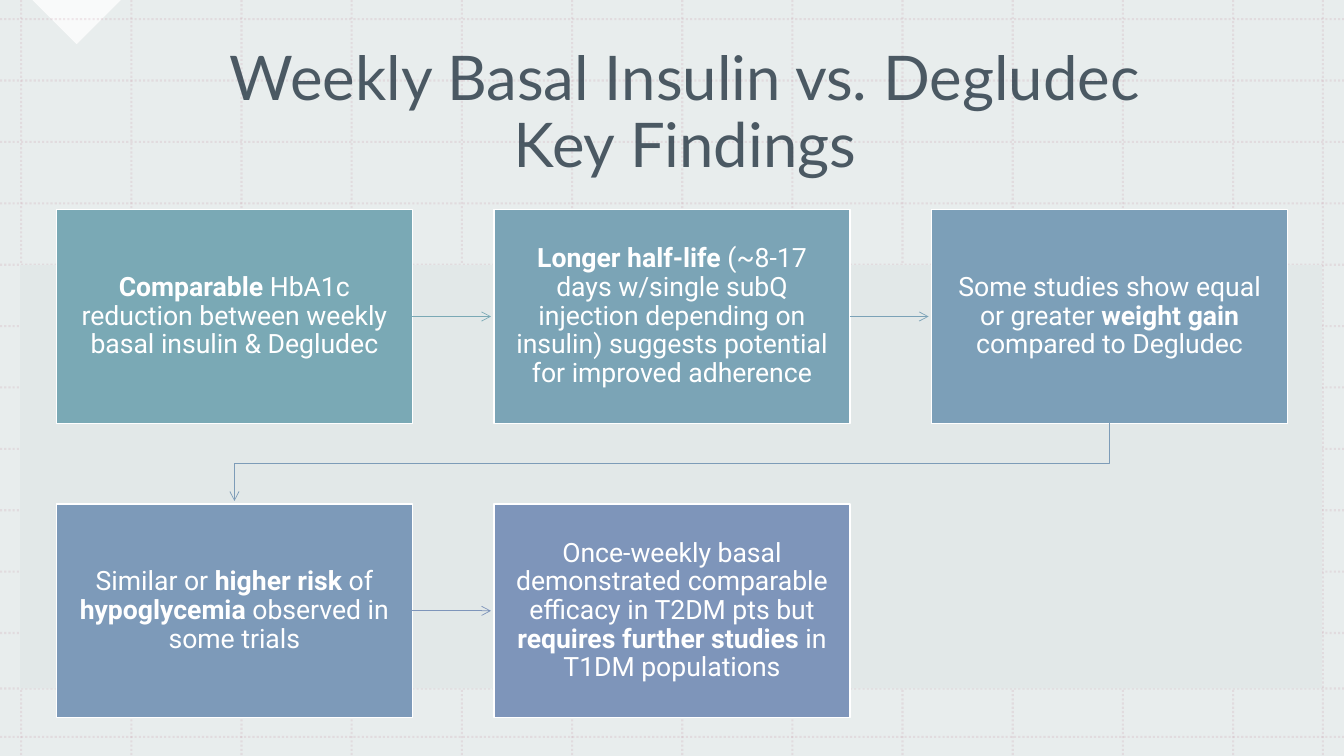
from lxml import etree
from pptx import Presentation
from pptx.dml.color import RGBColor
from pptx.enum.dml import MSO_LINE
from pptx.enum.shapes import MSO_CONNECTOR, MSO_SHAPE
from pptx.enum.text import MSO_ANCHOR, MSO_AUTO_SIZE, PP_ALIGN
from pptx.oxml.ns import qn
from pptx.util import Inches, Pt

RECTANGLE, TRIANGLE = MSO_SHAPE.RECTANGLE, MSO_SHAPE.RIGHT_TRIANGLE
STRAIGHT, DOTTED = MSO_CONNECTOR.STRAIGHT, MSO_LINE.ROUND_DOT
MIDDLE, CENTER, NO_FIT = MSO_ANCHOR.MIDDLE, PP_ALIGN.CENTER, MSO_AUTO_SIZE.NONE
RIGHT_SIDE = 3

PAGE_WIDTH, PAGE_HEIGHT = 13.33, 7.5
BOX_WIDTH, BOX_HEIGHT = 3.53, 2.12
BOX_LEFT, BOX_TOP = 0.56, 2.08
COLUMN_STEP, ROW_STEP = 4.34, 2.92
COLUMNS = 3
ARROW_GAP = 0.03

# Text between asterisks is bold; each arrow colour belongs to the arrow leaving the box.
FINDINGS = [
    ("*Comparable* HbA1c reduction between weekly basal insulin & Degludec",
     "7AA9B5", "7AA9B5"),
    ("*Longer half-life *(~8-17 days w/single subQ injection depending on "
     "insulin) suggests potential for improved adherence", "7BA4B6", "7BA2B7"),
    ("Some studies show equal or greater *weight gain* compared to Degludec",
     "7C9FB8", "7D9CB8"),
    ("Similar or *higher risk *of* hypoglycemia* observed in some trials",
     "7D9AB9", "7E95BA"),
    ("Once-weekly basal demonstrated comparable efficacy in T2DM pts but "
     "*requires further studies* in T1DM populations", "7E95BA", None),
]


def paint(fill, color, opacity=100):
    """Fill with a solid hex colour, see-through when opacity is below 100."""
    fill.solid()
    fill.fore_color.rgb = RGBColor.from_string(color)
    if opacity < 100:
        color_node = fill._xPr.find(".//" + qn("a:srgbClr"))
        etree.SubElement(color_node, qn("a:alpha"), val=str(opacity * 1000))


def set_all(target, values):
    for name, value in values.items():
        setattr(target, name, value)


class FindingsPage:
    """The current slide together with its fonts and line styles."""

    title_font = {"name": "Lato", "size": Pt(44)}
    box_font = {"name": "Roboto", "size": Pt(19)}
    centred = {"alignment": CENTER, "line_spacing": 0.9}
    title_frame = {"vertical_anchor": MIDDLE, "word_wrap": True, "auto_size": NO_FIT}
    box_frame = {"vertical_anchor": MIDDLE, "word_wrap": True,
                 "margin_left": Inches(0.17), "margin_right": Inches(0.17),
                 "margin_top": Inches(0.18), "margin_bottom": Inches(0.18)}

    def __init__(self, deck, background):
        self.page = deck.slides.add_slide(deck.slide_layouts[5])
        self.shapes = self.page.shapes
        paint(self.page.background.fill, background)

    def add_spans(self, para, text, font, color, opacity=100):
        set_all(para, self.centred)
        for index, piece in enumerate(text.split("*")):
            if piece:
                span = para.add_run()
                span.text = piece
                set_all(span.font, {**font, "bold": index % 2 == 1})
                paint(span.font.fill, color, opacity)

    def title(self, lines, left, top, width, height):
        box = self.shapes.title
        set_all(box, {"left": Inches(left), "top": Inches(top),
                      "width": Inches(width), "height": Inches(height)})
        set_all(box.text_frame, self.title_frame)
        para = box.text_frame.paragraphs[0]
        for index, line in enumerate(lines):
            if index:
                para.add_line_break()
            self.add_spans(para, line, self.title_font, "243441", 80)
        box.element.getparent().append(box.element)  # in front of the grid

    def shape(self, kind, left, top, width, height, color, opacity=100):
        shape = self.shapes.add_shape(
            kind, Inches(left), Inches(top), Inches(width), Inches(height))
        shape.shadow.inherit = False
        paint(shape.fill, color, opacity)
        shape.line.fill.background()
        return shape

    def finding(self, left, top, text, color):
        box = self.shape(RECTANGLE, left, top, BOX_WIDTH, BOX_HEIGHT, color)
        paint(box.line.fill, "FFFFFF")
        box.line.width = Pt(1)
        set_all(box.text_frame, self.box_frame)
        self.add_spans(box.text_frame.paragraphs[0], text, self.box_font, "FFFFFF")
        return box

    def line(self, x1, y1, x2, y2, color, width, opacity=100):
        line = self.shapes.add_connector(
            STRAIGHT, Inches(x1), Inches(y1), Inches(x2), Inches(y2))
        paint(line.line.fill, color, opacity)
        line.line.width = Pt(width)
        etree.SubElement(line.element.spPr, qn("a:effectLst"))
        return line

    def grid_line(self, x1, y1, x2, y2):
        self.line(x1, y1, x2, y2, "C796A6", 1.5, 20).line.dash_style = DOTTED

    def arrowhead(self, shape):
        outline = shape.element.spPr.find(qn("a:ln"))
        etree.SubElement(outline, qn("a:tailEnd"), type="arrow")

    def arrow_right(self, box, left, top, color):
        start, middle = left + BOX_WIDTH, top + BOX_HEIGHT / 2
        end = left + COLUMN_STEP - ARROW_GAP
        arrow = self.line(start, middle, end, middle, color, 0.5)
        arrow.begin_connect(box, RIGHT_SIDE)
        self.arrowhead(arrow)

    def arrow_to_next_row(self, left, top, color):
        """Bent arrow from the last box of a row to the first of the next."""
        start_x, end_x = left + BOX_WIDTH / 2, BOX_LEFT + BOX_WIDTH / 2
        start_y, end_y = top + BOX_HEIGHT, top + ROW_STEP
        bend_y = (start_y + end_y) / 2
        corners = [(start_x, bend_y), (end_x, bend_y), (end_x, end_y - ARROW_GAP)]
        builder = self.shapes.build_freeform(Inches(start_x), Inches(start_y))
        builder.add_line_segments(
            [(Inches(x), Inches(y)) for x, y in corners], close=False)
        arrow = builder.convert_to_shape()
        arrow.shadow.inherit = False
        arrow.fill.background()
        paint(arrow.line.fill, color)
        arrow.line.width = Pt(0.5)
        self.arrowhead(arrow)


def main():
    deck = Presentation()
    deck.slide_width, deck.slide_height = Inches(PAGE_WIDTH), Inches(PAGE_HEIGHT)
    page = FindingsPage(deck, "E8EDED")

    page.shape(TRIANGLE, 0.45, -0.31, 0.62, 0.62, "FFFFFF", 75).rotation = 315
    for x in [0.21 + 12.02 * step / 11 for step in range(12)] + [13.12]:
        page.grid_line(x, 0, x, PAGE_HEIGHT)
    for y in [0.19 + 6.09 * step / 10 for step in range(11)] + [6.83, 7.31]:
        page.grid_line(0, y, PAGE_WIDTH, y)

    page.title(["Weekly Basal Insulin vs. Degludec", "Key Findings"],
               0.92, 0.25, 11.75, 1.76)
    page.shape(RECTANGLE, 0.2, 2.63, 12.91, 4.2, "E2E8E8")

    for index, (text, color, arrow_color) in enumerate(FINDINGS):
        row, column = divmod(index, COLUMNS)
        left, top = BOX_LEFT + column * COLUMN_STEP, BOX_TOP + row * ROW_STEP
        box = page.finding(left, top, text, color)
        if arrow_color and column < COLUMNS - 1:
            page.arrow_right(box, left, top, arrow_color)
        elif arrow_color:
            page.arrow_to_next_row(left, top, arrow_color)

    deck.save("out.pptx")


if __name__ == "__main__":
    main()
